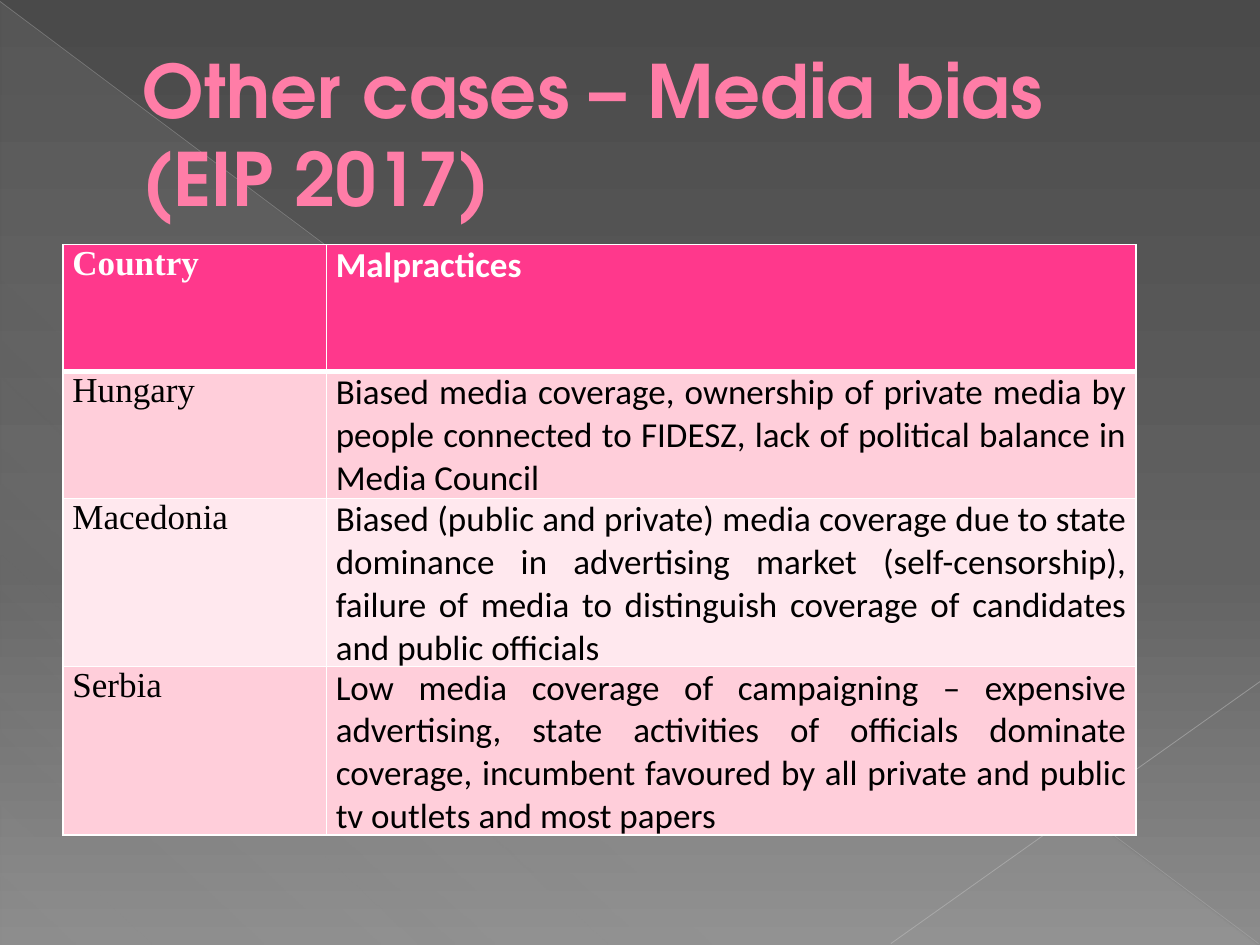
from dataclasses import dataclass

from lxml import etree
from pptx import Presentation
from pptx import util as u
from pptx.dml.color import RGBColor
from pptx.enum import shapes, text
from pptx.oxml import ns

Cm, Pt = u.Cm, u.Pt


@dataclass(frozen=True)
class Theme:
    back: tuple = ((0, "4A4A4A", 100), (60, "626262", 100), (100, "8C8C8C", 100))
    shade: tuple = ((0, "D2D2D2", 10), (70, "D2D2D2", 8), (100, "D2D2D2", 1))
    title: str = "FF7DA7"
    edge: str = "B12761"
    head: str = "FF388C"
    bands: tuple = ("FFCEDA", "FFE8EE")
    ink: str = "000000"
    white: str = "FFFFFF"
    face: str = "TeX Gyre Adventor"
    fonts: tuple = ("Times New Roman", "Calibri")
    big: int = 42
    body: int = 20


T = Theme()

ROWS = [
    ("Country", "Malpractices"),
    ("Hungary", "Biased media coverage, ownership of private media by people "
     "connected to FIDESZ, lack of political balance in Media Council"),
    ("Macedonia", "Biased (public and private) media coverage due to state "
     "dominance in advertising market (self-censorship), failure of media to "
     "distinguish coverage of candidates and public officials"),
    ("Serbia", "Low media coverage of campaigning – expensive advertising, "
     "state activities of officials dominate coverage, incumbent favoured by "
     "all private and public tv outlets and most papers"),
]


def node(tag, kids=(), **attrs):
    item = etree.Element(ns.qn(tag), {k: str(v) for k, v in attrs.items()})
    item.extend(kids)
    return item


def tint(color, alpha=100):
    kids = [node("a:alpha", val=alpha * 1000)] if alpha < 100 else []
    return node("a:srgbClr", kids, val=color)


def stroke(tag, color, width):
    return node(tag, [node("a:solidFill", [tint(color)])], w=int(Pt(width)))


def blend(fill, holder, stops, angle):
    """Give the holder's fill a linear gradient with these stops."""
    fill.solid()
    marks = [node("a:gs", [tint(c, a)], pos=p * 1000) for p, c, a in stops]
    grad = node("a:gradFill", [node("a:gsLst", marks),
                               node("a:lin", ang=angle * 60000, scaled=0)],
                rotWithShape=1)
    old = holder.find(ns.qn("a:solidFill"))
    holder.replace(old, grad)


def style(run, face, size, color, bold):
    font = run.font
    font.name, font.size, font.bold = face, Pt(size), bold
    font.color.rgb = RGBColor.from_string(color)


def ray(slide, start, end, color, width, alpha):
    line = slide.shapes.add_connector(
        shapes.MSO_CONNECTOR.STRAIGHT, *map(Cm, start + end))
    line.line.width = Pt(width)
    line.line.color.rgb = RGBColor.from_string(color)
    mark = line.element.spPr.find(".//" + ns.qn("a:srgbClr"))
    mark.append(node("a:alpha", val=alpha * 1000))
    line.element.spPr.append(node("a:effectLst"))


def backdrop(slide, x, y, w, h):
    # Dark gradient
    fill = slide.background.fill
    fill.solid()
    blend(fill, slide.element.find(".//" + ns.qn("p:bgPr")), T.back, 90)
    # Pale corner
    half = slide.shapes.add_shape(
        shapes.MSO_SHAPE.RIGHT_TRIANGLE,
        Cm(x + 0.02), Cm(y + 0.04), Cm(w - 0.05), Cm(h - 0.04))
    half.shadow.inherit = False
    half.line.fill.background()
    blend(half.fill, half.element.spPr, T.shade, 133)
    # Crossing rays
    base = y + h - 0.03
    ray(slide, (x, y + 0.03), (x + w - 0.03, base), "BFBFBF", 0.39, 35)
    ray(slide, (x + w, y + 13.74), (x + 17.96, base), "C6C6C6", 0.47, 45)


def heading(slide, x, y, w, h):
    box = slide.shapes.add_textbox(Cm(x), Cm(y), Cm(w), Cm(h))
    frame = box.text_frame
    frame.word_wrap = True
    frame.vertical_anchor = text.MSO_ANCHOR.MIDDLE
    frame.text = "Other cases – Media bias (EIP 2017)"
    para = frame.paragraphs[0]
    para._p.get_or_add_pPr().set("marL", str(int(Cm(1.35))))
    run = para.runs[0]
    style(run, T.face, T.big, T.title, True)
    run.font._element.insert(0, stroke("a:ln", T.edge, 0.5))


def entry(cell, words, face, fill, ink, bold):
    cell.margin_left = cell.margin_right = Cm(0.19)
    cell.margin_top = cell.margin_bottom = 0
    cell.text_frame.text = words
    para = cell.text_frame.paragraphs[0]
    para.alignment = text.PP_ALIGN.JUSTIFY
    style(para.runs[0], face, T.body, ink, bold)
    cell.fill.solid()
    cell.fill.fore_color.rgb = RGBColor.from_string(fill)


def border(cell, top, base):
    widths = {"L": 1, "R": 1, "T": top, "B": base}
    for spot, (side, width) in enumerate(widths.items()):
        cell._tc.tcPr.insert(spot, stroke("a:ln" + side, T.white, width))


def cases(slide, x, y, w, h):
    first = 5.31
    table = slide.shapes.add_table(
        len(ROWS), 2, Cm(x), Cm(y), Cm(w), Cm(h)).table
    for col, size in zip(table.columns, (first, w - first)):
        col.width = Cm(size)
    for r, row in enumerate(ROWS):
        table.rows[r].height = Cm(h / len(ROWS))
        head = r == 0
        fill = T.head if head else T.bands[(r - 1) % 2]
        ink = T.white if head else T.ink
        for c, words in enumerate(row):
            cell = table.cell(r, c)
            entry(cell, words, T.fonts[c], fill, ink, head)
            border(cell, 3 if r == 1 else 1, 3 if head else 1)


def main():
    deck = Presentation()
    deck.slide_width, deck.slide_height = Cm(25.4), Cm(19.05)
    slide = deck.slides.add_slide(deck.slide_layouts[6])
    backdrop(slide, 0, 0, 25.4, 19.05)
    heading(slide, 1.27, 0.74, 22.86, 3.89)
    cases(slide, 1.27, 4.93, 21.63, 10.24)
    deck.save("out.pptx")


if __name__ == "__main__":
    main()
